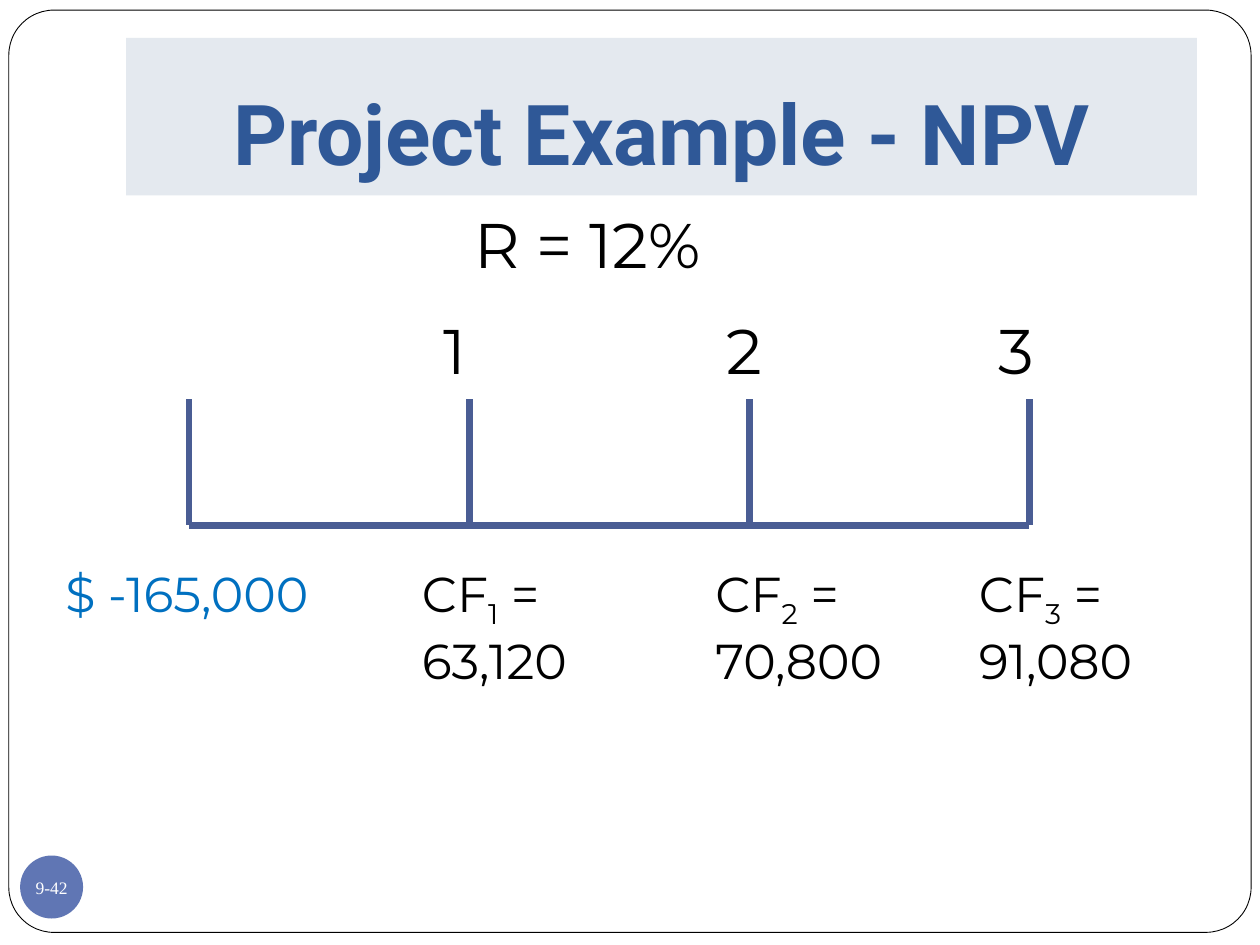
from pptx import Presentation
from pptx.dml.color import RGBColor
from pptx.enum.shapes import MSO_CONNECTOR as Link, MSO_SHAPE as Form
from pptx.enum.text import MSO_ANCHOR as Anchor, MSO_AUTO_SIZE as Fit, PP_ALIGN as Align
from pptx.oxml.ns import qn
from pptx.util import Inches, Pt
from lxml.etree import SubElement

WHITE = RGBColor(0xFF, 0xFF, 0xFF)
BLACK = RGBColor(0, 0, 0)
NAVY = RGBColor(0x2F, 0x58, 0x97)
PALE = RGBColor(0xE4, 0xE9, 0xEF)
DISC = RGBColor(0x60, 0x76, 0xB4)
AXIS = RGBColor(0x4A, 0x5D, 0x94)
COST = RGBColor(0x00, 0x70, 0xC0)
BODY = "Montserrat"
FLOWS = [
    ("1", "63,120", (3.42, 0.67), (3.25, 2.33)),
    ("2", "70,800", (5.67, 0.92), (5.58, 1.67)),
    ("3", "91,080", (7.83, 0.83), (7.67, 1.75)),
]


def style(para, size, color, face=BODY, bold=False):
    font = para.font
    font.name, font.size, font.bold = face, Pt(size), bold
    font.color.rgb = color


def add_form(shapes, form, box, fill):
    shape = shapes.add_shape(form, *map(Inches, box))
    shape.shadow.inherit = False
    shape.fill.solid()
    shape.fill.fore_color.rgb = fill
    return shape


def add_text(shapes, box, parts, size, color=BLACK):
    frame = shapes.add_textbox(*map(Inches, box)).text_frame
    frame.word_wrap = True
    frame.auto_size = Fit.SHAPE_TO_FIT_TEXT
    para = frame.paragraphs[0]
    style(para, size, color)
    for part, base in parts:
        run = para.add_run()
        run.text = part
        if base:
            run.font._element.set("baseline", str(base * 1000))


def add_line(shapes, *ends):
    line = shapes.add_connector(Link.STRAIGHT, *map(Inches, ends))
    line.line.color.rgb = AXIS
    line.line.width = Pt(4)
    SubElement(line.element.spPr, qn("a:effectLst"))


def add_frame(shapes, box):
    left, top, width, height = box
    card = add_form(shapes, Form.ROUNDED_RECTANGLE, box, WHITE)
    card.adjustments[0] = 0.049
    card.line.color.rgb = BLACK
    card.line.width = Pt(0.5)
    spot = (left + 0.09, top + height - 0.61, 0.5, 0.5)
    badge = add_form(shapes, Form.OVAL, spot, DISC)
    badge.line.fill.background()
    text = badge.text_frame
    text.margin_left = text.margin_right = text.margin_top = text.margin_bottom = 0
    text.word_wrap = False
    text.vertical_anchor = Anchor.MIDDLE
    para = text.paragraphs[0]
    para.text = "9-42"
    para.alignment = Align.CENTER
    style(para, 10, WHITE, "Times New Roman")


def set_title(shapes, box):
    title = shapes.title
    shapes.element.append(title.element)
    title.left, title.top, title.width, title.height = map(Inches, box)
    title.fill.solid()
    title.fill.fore_color.rgb = PALE
    text = title.text_frame
    text.auto_size = Fit.NONE
    text.vertical_anchor = Anchor.BOTTOM
    text.margin_bottom = Inches(0.1)
    para = text.paragraphs[0]
    para.text = "Project Example - NPV"
    para.alignment = Align.CENTER
    style(para, 48, NAVY, "Roboto", True)


def add_flows(shapes, box):
    left, top, width, height = box
    base = top + height
    step = width / len(FLOWS)
    low = base + 0.25
    add_text(shapes, (0.42, low, 2.42, 0.57), [("$ -165,000", 0)], 28, COST)
    add_line(shapes, left, base, left + width, base)
    for i in range(len(FLOWS) + 1):
        x = left + i * step
        add_line(shapes, x, top, x, base)
    for year, cash, (x, wide), (cx, span) in FLOWS:
        add_text(shapes, (x, top - 0.75, wide, 0.71), [(year, 0)], 36)
        parts = [("CF", 0), (year, -25), (" = " + cash, 0)]
        add_text(shapes, (cx, low, span, 1.04), parts, 28)


def main():
    deck = Presentation()
    deck.slide_width, deck.slide_height = Inches(10), Inches(7.5)
    shapes = deck.slides.add_slide(deck.slide_layouts[5]).shapes
    add_frame(shapes, (0.07, 0.08, 9.86, 7.32))
    set_title(shapes, (1, 0.3, 8.5, 1.25))
    add_text(shapes, (3.67, 1.58, 3, 0.71), [("R = 12%", 0)], 36)
    add_flows(shapes.add_group_shape().shapes, (1.5, 3.17, 6.67, 1))
    deck.save("out.pptx")


if __name__ == "__main__":
    main()
